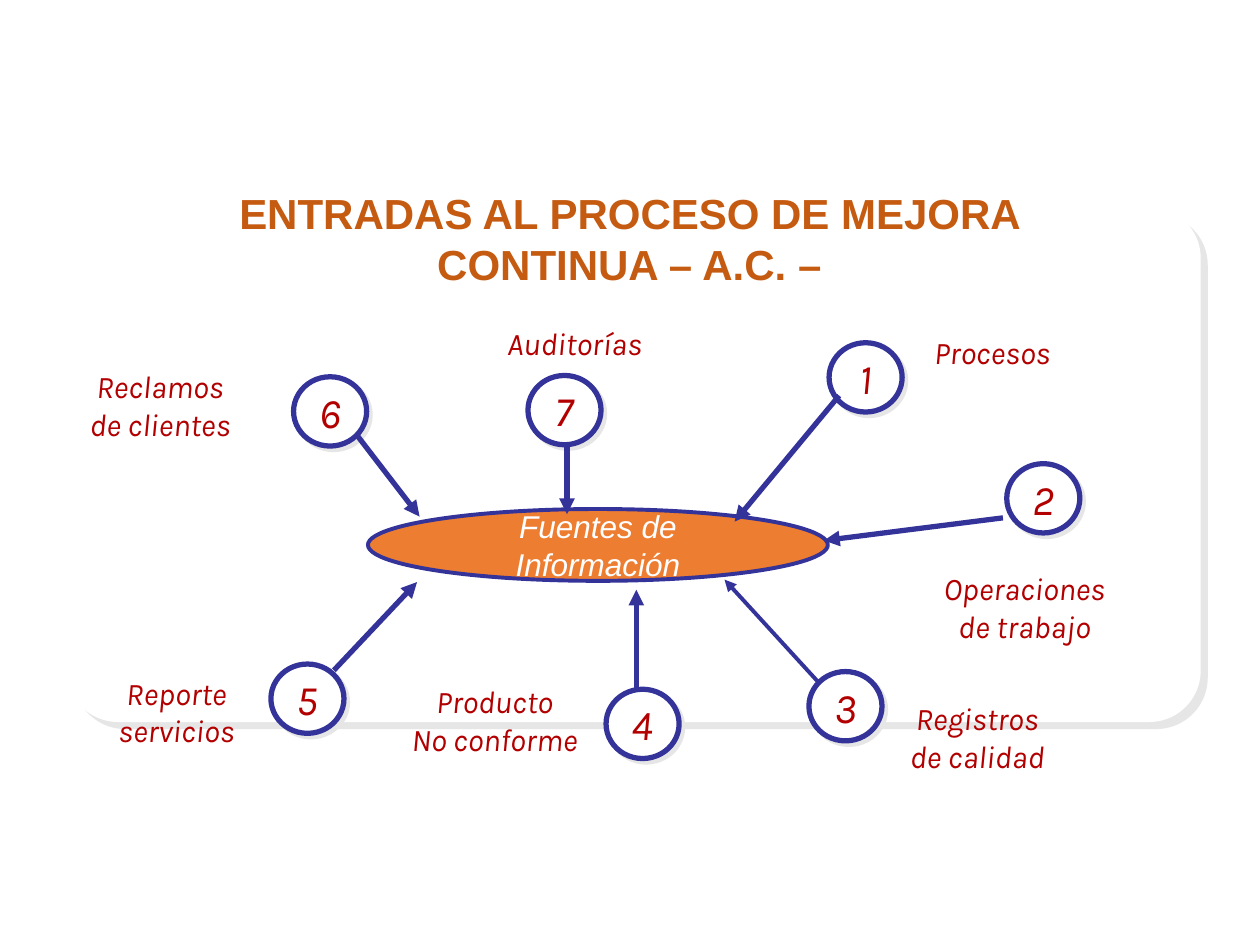
from lxml import etree
from pptx import Presentation
from pptx import util as u
from pptx.dml.color import RGBColor
from pptx.enum import shapes, text
from pptx.oxml.ns import qn

COLORS = {"white": "FFFFFF", "hub": "ED7D31", "line": "333399",
          "shadow": "E7E6E6", "label": "B20000", "title": "C55A11", "black": "000000"}
LABEL = {"name": "Karla", "size": u.Pt(18), "italic": True, "color": "label"}
NUMBER = {**LABEL, "size": u.Pt(24)}
HUB = {**LABEL, "name": "Arial", "color": "white"}
TITLE = {"name": "Arial", "size": u.Pt(24), "bold": True, "italic": False, "color": "title"}

presentation = Presentation()
presentation.slide_width, presentation.slide_height = u.Inches(10), u.Inches(7.5)
column, row = presentation.slide_width / 100, presentation.slide_height / 75
slide = presentation.slides.add_slide(presentation.slide_layouts[5])


def write(shape, content, style, anchor=text.MSO_ANCHOR.MIDDLE, wrap=True):
    frame = shape.text_frame
    frame.text = content
    frame.word_wrap, frame.vertical_anchor = wrap, anchor
    for paragraph in frame.paragraphs:
        paragraph.alignment = text.PP_ALIGN.CENTER
        font = paragraph.runs[0].font
        for attribute, value in style.items():
            if attribute == "color":
                font.color.rgb = RGBColor.from_string(COLORS[value])
            else:
                setattr(font, attribute, value)


def add_shadow(properties, color, distance):
    effects = properties.find(qn("a:effectLst"))
    if effects is None:
        effects = etree.Element(qn("a:effectLst"))
        properties.find(qn("a:solidFill")).addnext(effects)
    outer = etree.SubElement(effects, qn("a:outerShdw"), blurRad="0",
                             dist=str(u.Pt(distance)), dir="2700000", algn="ctr", rotWithShape="0")
    etree.SubElement(outer, qn("a:srgbClr"), val=COLORS[color])


OVAL, PANEL = shapes.MSO_SHAPE.OVAL, shapes.MSO_SHAPE.ROUNDED_RECTANGLE
outlines = [
    (PANEL, 5.3, 16.4, 90, 40.9, "white", 0, 5.7, "", HUB),
    (OVAL, 29.2, 40.4, 36.5, 5.7, "hub", 2.25, 0, "Fuentes de Información", HUB),
]
bubbles = [("1", 65.8, 27.2), ("2", 79.9, 36.8), ("3", 64.2, 53.3), ("4", 48.1, 54.7),
           ("5", 21.5, 52.7), ("6", 23.3, 29.9), ("7", 41.9, 29.8)]
for number, left, top in bubbles:
    outlines.append((OVAL, left, top, 5.8, 5.5, "white", 3, 2.8, number, NUMBER))

for kind, left, top, width, height, fill, weight, shadow, content, style in outlines:
    shape = slide.shapes.add_shape(kind, int(left * column), int(top * row),
                                   int(width * column), int(height * row))
    shape.shadow.inherit = False
    shape.fill.solid()
    shape.fill.fore_color.rgb = RGBColor.from_string(COLORS[fill])
    if weight:
        shape.line.color.rgb = RGBColor.from_string(COLORS["line"])
        shape.line.width = u.Pt(weight)
    else:
        shape.line.fill.background()
    if shadow:
        add_shadow(shape.element.spPr, "shadow", shadow)
    if kind == PANEL:
        shape.adjustments[0] = 0.1
    if content:
        write(shape, content, style, wrap=len(content) > 1)

labels = [
    ("Procesos", 70.7, 25.9, 16.1, 4),
    ("Operaciones\nde trabajo", 70.4, 44.6, 21.8, 7.1),
    ("Registros\nde calidad", 66.7, 54.9, 21.7, 7.1),
    ("Producto\nNo conforme", 30.3, 53.6, 17.9, 7.1),
    ("Reporte\nservicios", 6.1, 52.9, 15.8, 7.1),
    ("Reclamos\nde clientes", 1.6, 28.6, 22.2, 7.1),
    ("Auditorías", 38.7, 25.2, 13.8, 4),
]
for content, left, top, width, height in labels:
    box = slide.shapes.add_textbox(int(left * column), int(top * row),
                                   int(width * column), int(height * row))
    write(box, content, LABEL)

arrows = [(66.6, 31.4, 58.3, 41.4, 3), (79.6, 41.1, 65.4, 42.9, 3),
          (65, 54.2, 57.5, 46, 2.25), (50.5, 54.8, 50.5, 46.8, 3),
          (26.5, 53.2, 33.1, 46.2, 3), (28.3, 34.5, 33.3, 41, 3),
          (45, 35.4, 45, 40.8, 3)]
for start_x, start_y, end_x, end_y, weight in arrows:
    arrow = slide.shapes.add_connector(shapes.MSO_CONNECTOR.STRAIGHT,
                                       int(start_x * column), int(start_y * row),
                                       int(end_x * column), int(end_y * row))
    arrow.line.color.rgb = RGBColor.from_string(COLORS["line"])
    arrow.line.width = u.Pt(weight)
    etree.SubElement(arrow.line._get_or_add_ln(), qn("a:tailEnd"), type="triangle")
    etree.SubElement(arrow.element.spPr, qn("a:effectLst"))

title = slide.shapes.title
title.left, title.top = int(9.8 * column), int(14.4 * row)
title.width, title.height = int(80.3 * column), int(9.1 * row)
write(title, "ENTRADAS AL PROCESO DE MEJORA CONTINUA – A.C. –", TITLE, text.MSO_ANCHOR.TOP)
add_shadow(title.text_frame.paragraphs[0].runs[0].font._element, "black", 2)
slide.shapes.element.append(title.element)

presentation.save("out.pptx")
